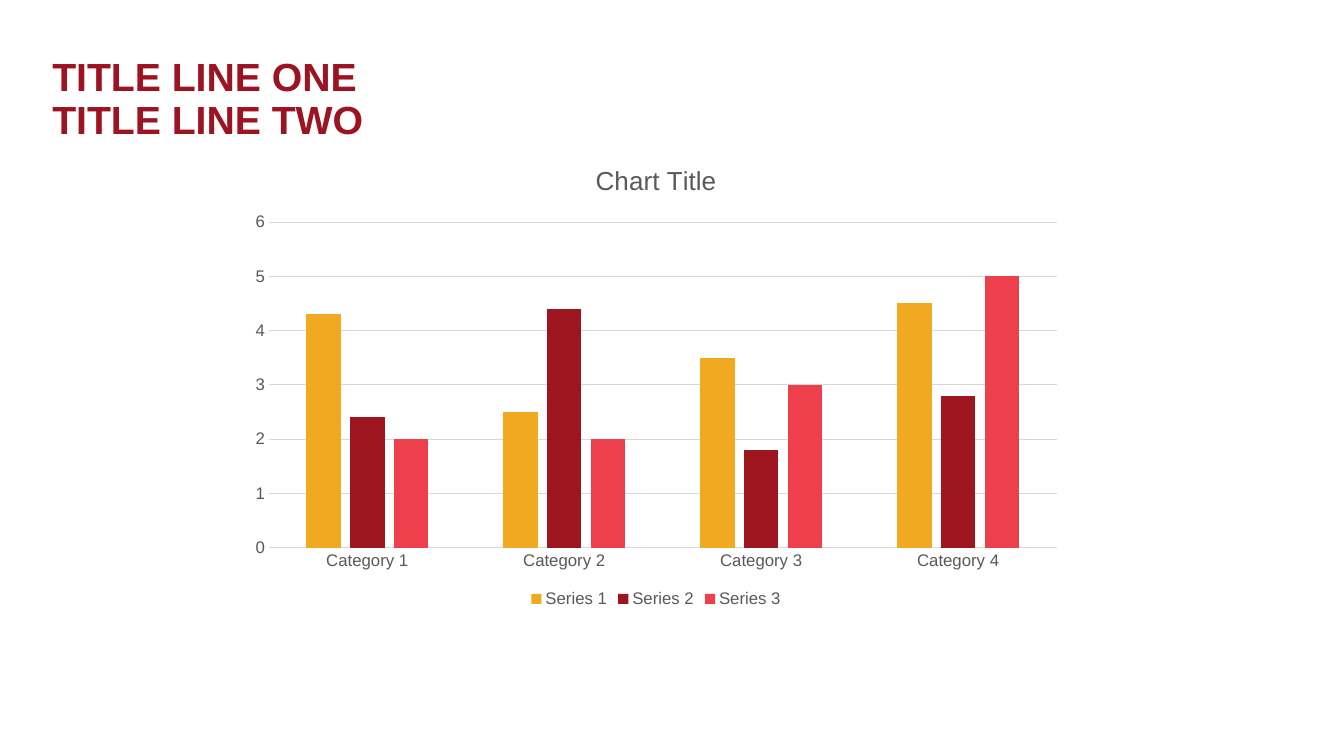
from dataclasses import dataclass

import pptx
import pptx.chart.data
import pptx.dml.color
import pptx.enum.chart
import pptx.enum.text
import pptx.util
from pptx.util import Cm


@dataclass(frozen=True)
class Theme:
    font: str = "Arial"
    heading: str = "9C1321"
    label: str = "595959"
    rule: str = "D9D9D9"
    series: tuple = ("F0A920", "9D151F", "EE3F4D")
    heading_size: float = 28
    chart_title_size: float = 18.6
    label_size: float = 12
    rule_width: float = 0.75


THEME = Theme()
CATEGORIES = [f"Category {n}" for n in range(1, 5)]
SERIES = {
    "Series 1": (4.3, 2.5, 3.5, 4.5),
    "Series 2": (2.4, 4.4, 1.8, 2.8),
    "Series 3": (2, 2, 3, 5),
}


def rgb(colour):
    return pptx.dml.color.RGBColor.from_string(colour)


def set_font(font, size, colour, bold=False):
    font.name = THEME.font
    font.size = pptx.util.Pt(size)
    font.bold = bold
    font.color.rgb = rgb(colour)


def set_rule(line):
    line.color.rgb = rgb(THEME.rule)
    line.width = pptx.util.Pt(THEME.rule_width)


def add_heading(slide, text, left, top, width, height):
    frame = slide.shapes.add_textbox(left, top, width, height).text_frame
    frame.word_wrap = True
    frame.vertical_anchor = pptx.enum.text.MSO_ANCHOR.MIDDLE
    heading = frame.paragraphs[0]
    heading.text = text
    heading.line_spacing = 0.9
    set_font(heading.font, THEME.heading_size, THEME.heading, bold=True)


def style_axes(chart):
    for axis in (chart.category_axis, chart.value_axis):
        axis.major_tick_mark = pptx.enum.chart.XL_TICK_MARK.NONE
        axis.minor_tick_mark = pptx.enum.chart.XL_TICK_MARK.NONE
        set_font(axis.tick_labels.font, THEME.label_size, THEME.label)
    set_rule(chart.category_axis.format.line)
    values = chart.value_axis
    values.minimum_scale, values.maximum_scale, values.major_unit = 0, 6, 1
    values.format.line.fill.background()
    values.has_major_gridlines = True
    set_rule(values.major_gridlines.format.line)


def add_column_chart(slide, title, left, top, width, height):
    data = pptx.chart.data.CategoryChartData()
    data.categories = CATEGORIES
    for name, values in SERIES.items():
        data.add_series(name, values)
    chart = slide.shapes.add_chart(
        pptx.enum.chart.XL_CHART_TYPE.COLUMN_CLUSTERED,
        left, top, width, height, data).chart
    set_font(chart.font, THEME.label_size, THEME.label)

    # Title and legend
    chart.has_title = True
    chart_title = chart.chart_title.text_frame.paragraphs[0]
    chart_title.text = title
    set_font(chart_title.font, THEME.chart_title_size, THEME.label)
    chart.chart_title.include_in_layout = False
    chart.has_legend = True
    chart.legend.position = pptx.enum.chart.XL_LEGEND_POSITION.BOTTOM
    chart.legend.include_in_layout = False
    set_font(chart.legend.font, THEME.label_size, THEME.label)

    # Axes and columns
    style_axes(chart)
    columns = chart.plots[0]
    columns.gap_width = 219
    columns.overlap = -27
    columns.vary_by_categories = False
    for series, colour in zip(columns.series, THEME.series):
        series.invert_if_negative = False
        series.format.fill.solid()
        series.format.fill.fore_color.rgb = rgb(colour)


def main():
    deck = pptx.Presentation()
    deck.slide_width, deck.slide_height = Cm(33.87), Cm(19.05)
    slide = deck.slides.add_slide(deck.slide_layouts[6])
    add_heading(slide, "TITLE LINE ONE\vTITLE LINE TWO",
                Cm(1.07), Cm(0.69), Cm(30.12), Cm(3.68))
    add_column_chart(slide, "Chart Title",
                     Cm(6.02), Cm(3.63), Cm(21.03), Cm(11.79))
    deck.save("out.pptx")


if __name__ == "__main__":
    main()
